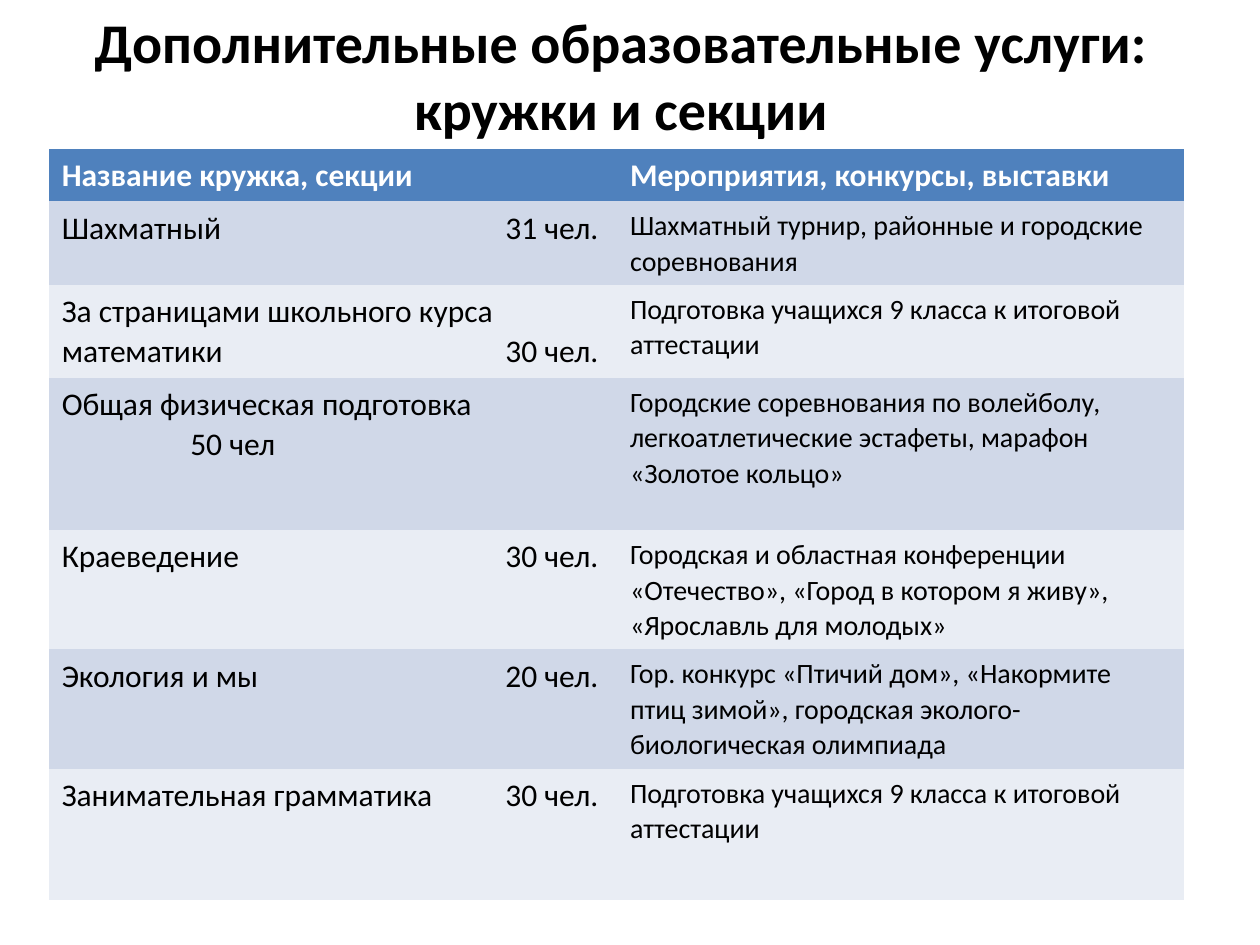
import pptx
import pptx.util
import pptx.dml.color
import pptx.enum.text
import pptx.oxml
import pptx.oxml.ns

WIDE, HIGH = 10, 7.5
FONT = "Calibri"
PLAIN = "{2D5ABB26-0587-4C30-8999-92F81FD0307C}"
COLS = [4.51, 4.5]
ROWS = [0.41, 0.65, 0.72, 1.21, 0.93, 0.93, 1.04]
HEAD = "4F81BD"
BANDS = ["E9EDF4", "D0D8E8"]
FAR = (4.26, "r")
NEAR = (1.02, "l")
TITLE = "Дополнительные образовательные услуги: кружки и секции"
HEADS = ["Название кружка, секции", "Мероприятия, конкурсы, выставки"]
CLUBS = [
    (["Шахматный\t31 чел."], FAR,
     "Шахматный турнир, районные и городские соревнования"),
    (["За страницами школьного курса математики\t30 чел."], FAR,
     "Подготовка учащихся 9 класса к итоговой аттестации"),
    (["Общая физическая подготовка", "\t50 чел"], NEAR,
     "Городские соревнования по волейболу, легкоатлетические эстафеты, "
     "марафон «Золотое кольцо»"),
    (["Краеведение\t30 чел."], FAR,
     "Городская и областная конференции «Отечество», "
     "«Город в котором я живу», «Ярославль для молодых»"),
    (["Экология и мы\t20 чел."], FAR,
     "Гор. конкурс «Птичий дом», «Накормите птиц зимой», "
     "городская эколого-биологическая олимпиада"),
    (["Занимательная грамматика\t30 чел."], FAR,
     "Подготовка учащихся 9 класса к итоговой аттестации"),
]


def inch(size):
    """Turn inches into a length."""
    return pptx.util.Inches(size)


def tint(code):
    """Turn a hex string into a colour."""
    return pptx.dml.color.RGBColor.from_string(code)


def add_run(para, text, size, code="000000", bold=False):
    """Add one formatted run to a paragraph."""
    run = para.add_run()
    run.text = text
    run.font.name = FONT
    run.font.size = pptx.util.Pt(size)
    run.font.bold = bold
    run.font.color.rgb = tint(code)


def add_tab(para, stop):
    """Give a paragraph one tab stop."""
    place, side = stop
    tabs = pptx.oxml.parse_xml(
        f'<a:tabLst {pptx.oxml.ns.nsdecls("a")}>'
        f'<a:tab pos="{inch(place)}" algn="{side}"/></a:tabLst>')
    para._p.get_or_add_pPr().append(tabs)


def fill_cell(cell, lines, back, size, code="000000", bold=False, stop=None):
    """Colour a cell and write its lines."""
    cell.fill.solid()
    cell.fill.fore_color.rgb = tint(back)
    para = cell.text_frame.paragraphs[0]
    para.line_spacing = 1.04
    if stop:
        add_tab(para, stop)
    for spot, line in enumerate(lines):
        if spot:
            para.add_line_break()
        add_run(para, line, size, code, bold)


def set_title(slide):
    """Place and write the slide title."""
    title = slide.shapes.title
    title.left, title.top = inch(0.43), inch(-0.03)
    title.width, title.height = inch(0.9 * WIDE), inch(HIGH / 6)
    frame = title.text_frame
    frame.word_wrap = True
    frame.vertical_anchor = pptx.enum.text.MSO_ANCHOR.MIDDLE
    para = frame.paragraphs[0]
    para.alignment = pptx.enum.text.PP_ALIGN.CENTER
    add_run(para, TITLE, 32, bold=True)


def add_clubs(slide):
    """Add the table of clubs and their events."""
    frame = slide.shapes.add_table(
        len(ROWS), len(COLS), inch(0.39), inch(1.18),
        inch(sum(COLS)), inch(sum(ROWS)))
    for style in frame.element.iter(pptx.oxml.ns.qn("a:tableStyleId")):
        style.text = PLAIN
    table = frame.table
    for col, width in zip(table.columns, COLS):
        col.width = inch(width)
    for row, height in zip(table.rows, ROWS):
        row.height = inch(height)
    for col, text in enumerate(HEADS):
        fill_cell(table.cell(0, col), [text], HEAD, 18, "FFFFFF", True)
    for row, (lines, stop, event) in enumerate(CLUBS, 1):
        back = BANDS[row % 2]
        fill_cell(table.cell(row, 0), lines, back, 18, stop=stop)
        fill_cell(table.cell(row, 1), [event], back, 16)


def main():
    """Build and save the slide."""
    deck = pptx.Presentation()
    deck.slide_width, deck.slide_height = inch(WIDE), inch(HIGH)
    slide = deck.slides.add_slide(deck.slide_layouts[5])
    set_title(slide)
    add_clubs(slide)
    deck.save("out.pptx")


if __name__ == "__main__":
    main()
